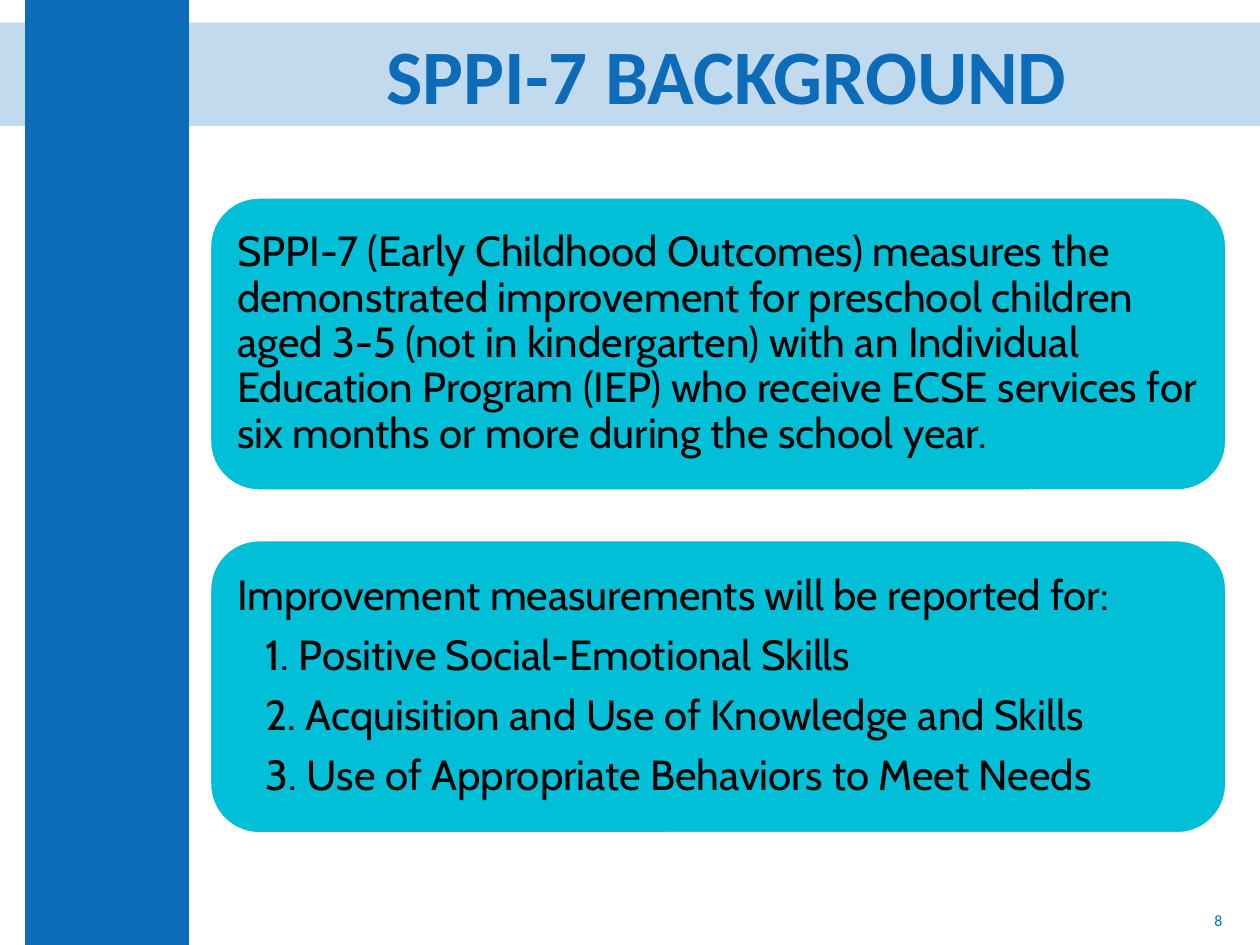
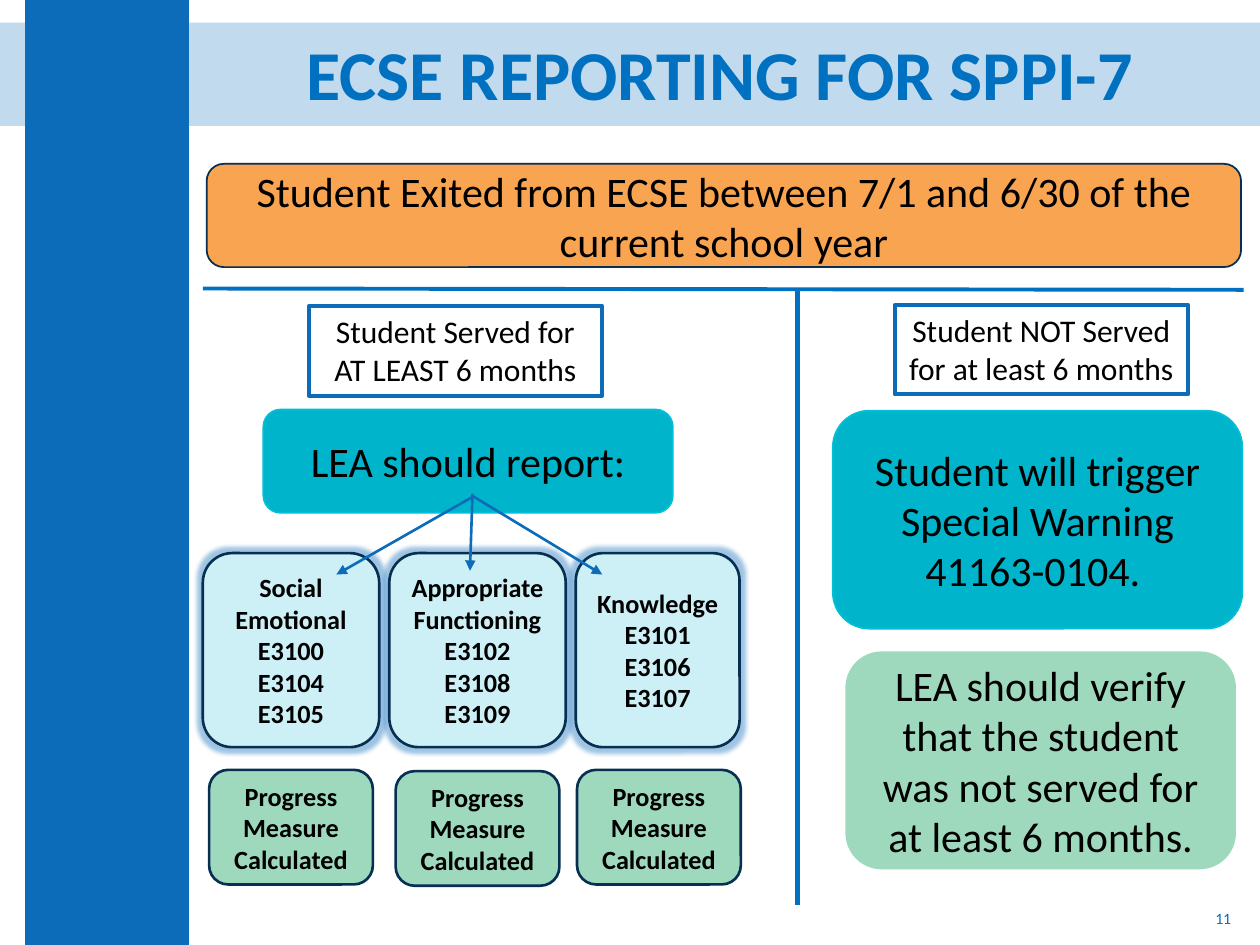
"""Build two slides on SPPI-7 background and ECSE reporting."""
from lxml import etree
from pptx import Presentation
from pptx import util as u
from pptx.dml.color import RGBColor
from pptx.enum import shapes, text
from pptx.oxml.ns import qn

BLUE, BRIGHT_BLUE, NAVY = "0D6CB9", "0070C0", "062F51"
CYAN, TEAL, PALE_CYAN = "00BFD7", "00B5CB", "CCF0F5"
GREEN, ORANGE, BLACK, WHITE = "9FD9BD", "F9A451", "000000", "FFFFFF"
ROUND, RECT = shapes.MSO_SHAPE.ROUNDED_RECTANGLE, shapes.MSO_SHAPE.RECTANGLE
MIDDLE, TOP = text.MSO_ANCHOR.MIDDLE, text.MSO_ANCHOR.TOP
CENTER, LEFT, RIGHT = text.PP_ALIGN.CENTER, text.PP_ALIGN.LEFT, text.PP_ALIGN.RIGHT


def write_text(frame, words, size, color=BLACK, name="Calibri", bold=False,
               anchor=MIDDLE, **paragraph_format):
    frame.text = words
    frame.word_wrap = True
    frame.auto_size = text.MSO_AUTO_SIZE.NONE
    frame.vertical_anchor = anchor
    for paragraph in frame.paragraphs:
        for key, value in {"alignment": CENTER, **paragraph_format}.items():
            setattr(paragraph, key, value)
        for key, value in {"size": u.Pt(size), "name": name, "bold": bold}.items():
            setattr(paragraph.font, key, value)
        paragraph.font.color.rgb = RGBColor.from_string(color)


def add_box(slide, kind, at, fill=None, line=None, width=1):
    shape = slide.shapes.add_shape(kind, *map(u.Inches, at))
    shape.shadow.inherit = False
    if fill:
        shape.fill.solid()
        shape.fill.fore_color.rgb = RGBColor.from_string(fill)
    else:
        shape.fill.background()
    if line:
        shape.line.color.rgb = RGBColor.from_string(line)
        shape.line.width = u.Pt(width)
    else:
        shape.line.fill.background()
    return shape


presentation = Presentation()
presentation.slide_width, presentation.slide_height = u.Inches(10), u.Inches(7.5)
layout = presentation.slide_layouts[5]

slides = []
for title, title_at, size, color, number, number_at in [
    ("SPPI-7 BACKGROUND", (1.56, 0.22, 8.42, 0.82), 44, BLUE,
     "8", (7.55, 7.1, 2.25, 0.4)),
    ("ECSE REPORTING FOR SPPI-7", (1.41, 0.21, 8.61, 0.82), 40, BRIGHT_BLUE,
     "11", (7.62, 7.09, 2.25, 0.4)),
]:
    slide = presentation.slides.add_slide(layout)
    placeholder = slide.shapes.title
    for side, value in zip(("left", "top", "width", "height"), title_at):
        setattr(placeholder, side, u.Inches(value))
    write_text(placeholder.text_frame, title, size, color, bold=True, line_spacing=0.9)
    page_box = slide.shapes.add_textbox(*map(u.Inches, number_at))
    write_text(page_box.text_frame, number, 9, BRIGHT_BLUE, alignment=RIGHT)
    slides.append(slide)
background, reporting = slides

title_band = add_box(background, RECT, (0, 0.18, 10, 0.82), BLUE)
band_color = title_band.fill._xPr.find(qn("a:solidFill"))[0]
etree.SubElement(band_color, qn("a:alpha"), val="25000")
side_band = add_box(background, RECT, (0.2, 0, 1.3, 7.5), BLUE)
for index, band in enumerate((title_band, side_band), start=2):
    layout.shapes.element.insert(index, band.element)

for top, words in [
    (1.57, "SPPI-7 (Early Childhood Outcomes) measures the demonstrated improvement "
           "for preschool children aged 3-5 (not in kindergarten) with an Individual "
           "Education Program (IEP) who receive ECSE services for six months or more "
           "during the school year."),
    (4.29, "Improvement measurements will be reported for:\n"
           "1. Positive Social-Emotional Skills\n"
           "2. Acquisition and Use of Knowledge and Skills\n"
           "3. Use of Appropriate Behaviors to Meet Needs"),
]:
    card = add_box(background, ROUND, (1.67, top, 8.06, 2.32), CYAN, WHITE)
    frame = card.text_frame
    for side in ("left", "top", "right", "bottom"):
        setattr(frame, f"margin_{side}", u.Inches(0.1))
    write_text(frame, words, 24, name="Cabin", alignment=LEFT, line_spacing=0.9,
               space_after=u.Pt(8.4))
    for paragraph in frame.paragraphs[1:]:
        paragraph._p.get_or_add_pPr().set("marL", str(u.Inches(0.23)))

for at, fill, line, words in [
    ((1.64, 1.3, 8.21, 0.82), ORANGE, NAVY,
     "Student Exited from ECSE between 7/1 and 6/30 of the current school year"),
    ((2.09, 3.25, 3.25, 0.82), TEAL, CYAN, "LEA should report:"),
    ((6.61, 3.26, 3.25, 1.73), TEAL, CYAN,
     "Student will trigger Special Warning 41163-0104. "),
    ((6.71, 5.17, 3.1, 1.73), GREEN, None,
     "LEA should verify that the student was not served for at least 6 months."),
]:
    step = add_box(reporting, ROUND, at, fill, line)
    write_text(step.text_frame, words, 24)

for left, top, words in [
    (2.45, 2.43, "Student Served for AT LEAST 6 months"),
    (7.1, 2.42, "Student NOT Served for at least 6 months"),
]:
    condition = add_box(reporting, RECT, (left, top, 2.33, 0.71), None, BLUE, 2.25)
    write_text(condition.text_frame, words, 18, anchor=TOP)

for left, width, words in [
    (1.61, 1.4, "Social Emotional\vE3100\vE3104\vE3105"),
    (3.09, 1.4, "Appropriate Functioning\vE3102\nE3108\vE3109"),
    (4.57, 1.3, "Knowledge\nE3101\nE3106\vE3107"),
]:
    outcome = add_box(reporting, ROUND, (left, 4.39, width, 1.54), PALE_CYAN, NAVY, 1.5)
    effects = outcome.element.spPr.find(qn("a:effectLst"))
    glow = etree.SubElement(effects, qn("a:glow"), rad=str(u.Pt(5)))
    glow_color = etree.SubElement(glow, qn("a:srgbClr"), val=BLUE)
    etree.SubElement(glow_color, qn("a:alpha"), val="40000")
    write_text(outcome.text_frame, words, 15, bold=True)

for left, top in [(1.66, 6.11), (3.14, 6.12), (4.58, 6.11)]:
    measure = add_box(reporting, ROUND, (left, top, 1.3, 0.91), GREEN, NAVY, 1.5)
    write_text(measure.text_frame, "Progress Measure Calculated", 15, bold=True)

for ends, color, width, arrow in [
    ((3.74, 3.95, 2.67, 4.56), BLUE, 1.5, True),
    ((3.75, 3.92, 3.73, 4.53), BLUE, 1.5, True),
    ((3.74, 3.93, 4.78, 4.56), BLUE, 1.5, True),
    ((6.33, 2.29, 6.33, 7.18), BRIGHT_BLUE, 3, False),
    ((1.61, 2.29, 9.87, 2.3), BRIGHT_BLUE, 2.25, False),
]:
    connector = reporting.shapes.add_connector(
        shapes.MSO_CONNECTOR.STRAIGHT, *map(u.Inches, ends))
    connector.line.color.rgb = RGBColor.from_string(color)
    connector.line.width = u.Pt(width)
    if arrow:
        etree.SubElement(connector.line._get_or_add_ln(), qn("a:tailEnd"), type="triangle")
    etree.SubElement(connector.element.spPr, qn("a:effectLst"))

presentation.save("out.pptx")
